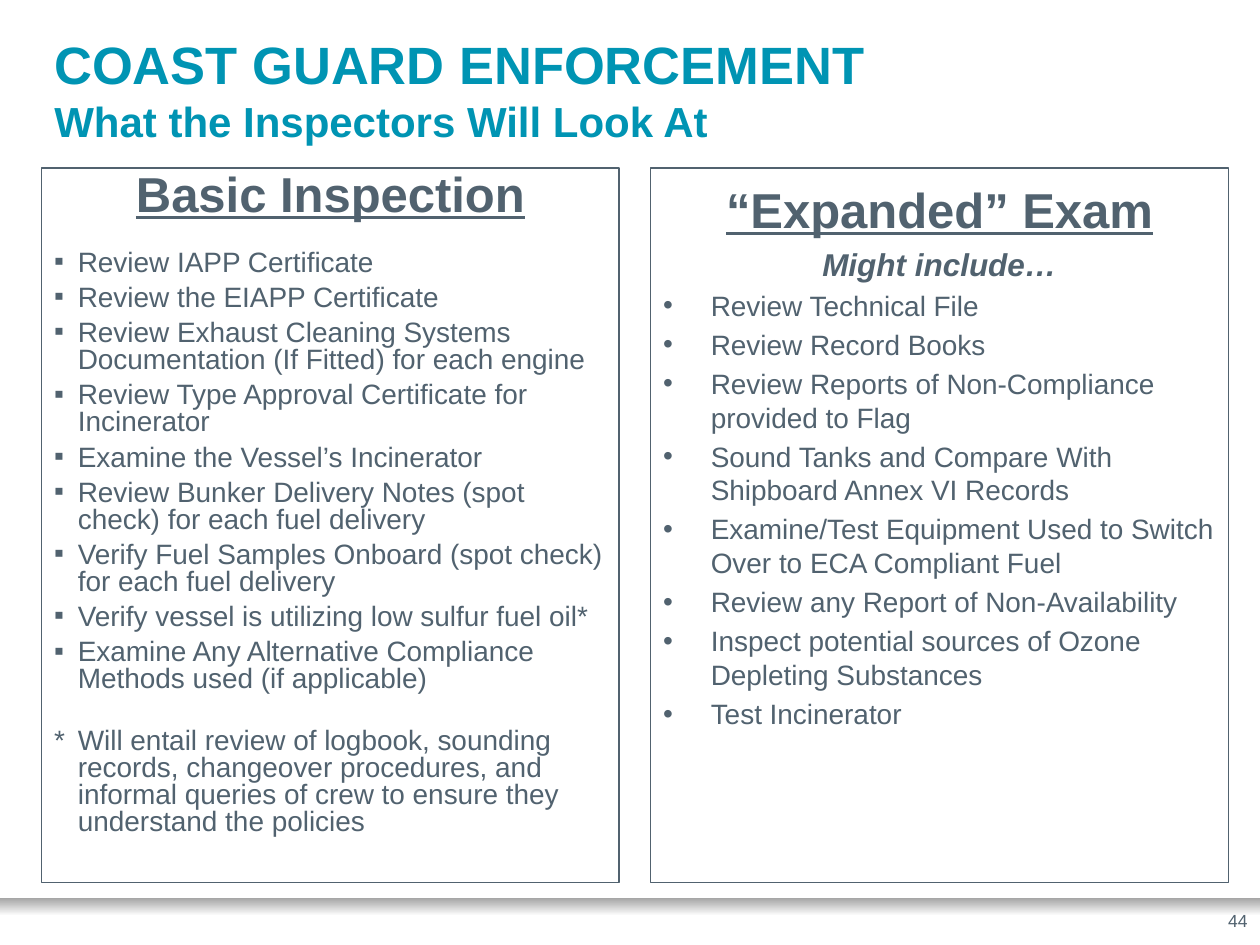
from lxml.etree import SubElement
from pptx import Presentation
from pptx.dml.color import RGBColor
from pptx.enum.shapes import MSO_SHAPE
from pptx.enum.text import MSO_ANCHOR, MSO_AUTO_SIZE, PP_ALIGN
from pptx.oxml.ns import qn
from pptx.util import Cm, Pt

COLORS = {"title": "0094B3", "text": "51626F", "band": "A6A6A6", "paper": "FFFFFF"}
FONT = "Arial"
BODY_SIZE = 16
PANEL_TOP, PANEL_WIDTH, PANEL_HEIGHT = 3.39, 11.64, 14.4

BASIC_ITEMS = [
    "Review IAPP Certificate",
    "Review the EIAPP Certificate",
    "Review Exhaust Cleaning Systems Documentation (If Fitted) for each engine",
    "Review Type Approval Certificate for Incinerator",
    "Examine the Vessel’s Incinerator",
    "Review Bunker Delivery Notes (spot check) for each fuel delivery",
    "Verify Fuel Samples Onboard (spot check) for each fuel delivery",
    "Verify vessel is utilizing low sulfur fuel oil*",
    "Examine Any Alternative Compliance Methods used (if applicable)",
]
FOOTNOTE = (
    "*\tWill entail review of logbook, sounding records, changeover procedures, "
    "and informal queries of crew to ensure they understand the policies"
)
EXPANDED_ITEMS = [
    "Review Technical File",
    "Review Record Books",
    "Review Reports of Non-Compliance provided to Flag",
    "Sound Tanks and Compare With Shipboard Annex VI Records",
    "Examine/Test Equipment Used to Switch Over to ECA Compliant Fuel",
    "Review any Report of Non-Availability",
    "Inspect potential sources of Ozone Depleting Substances",
    "Test Incinerator",
]


def rgb(name):
    return RGBColor.from_string(COLORS[name])


class SlideBuilder:
    def __init__(self, slide):
        self.slide = slide

    def style(self, font, size, color="text", bold=False, italic=False, underline=False):
        font.name, font.size = FONT, Pt(size)
        font.bold, font.italic, font.underline = bold, italic, underline
        font.color.rgb = rgb(color)

    def band(self, left, top, width, height):
        shape = self.slide.shapes.add_shape(
            MSO_SHAPE.RECTANGLE, Cm(left), Cm(top), Cm(width), Cm(height))
        shape.shadow.inherit = False
        shape.line.fill.background()
        shape.fill.gradient()
        shape.fill.gradient_angle = 270
        for stop, color, position in zip(
                shape.fill.gradient_stops, ("band", "paper"), (0, 0.42)):
            stop.color.rgb = rgb(color)
            stop.position = position

    def title(self, lines, sizes, left, top, width, height):
        shape = self.slide.shapes.title
        shape.left, shape.top = Cm(left), Cm(top)
        shape.width, shape.height = Cm(width), Cm(height)
        frame = shape.text_frame
        frame.text = "\v".join(lines)
        frame.auto_size = MSO_AUTO_SIZE.NONE
        frame.vertical_anchor = MSO_ANCHOR.MIDDLE
        paragraph = frame.paragraphs[0]
        paragraph.alignment = PP_ALIGN.LEFT
        for run, size in zip(paragraph.runs, sizes):
            self.style(run.font, size, "title", bold=True)

    def label(self, text, size, left, top, width, height):
        shape = self.slide.shapes.add_textbox(Cm(left), Cm(top), Cm(width), Cm(height))
        frame = shape.text_frame
        frame.word_wrap = True
        frame.vertical_anchor = MSO_ANCHOR.MIDDLE
        frame.text = text
        frame.paragraphs[0].alignment = PP_ALIGN.RIGHT
        self.style(frame.paragraphs[0].runs[0].font, size)

    def panel(self, left, inset_top):
        shape = self.slide.shapes.add_shape(
            MSO_SHAPE.RECTANGLE, Cm(left), Cm(PANEL_TOP), Cm(PANEL_WIDTH), Cm(PANEL_HEIGHT))
        shape.shadow.inherit = False
        shape.fill.background()
        shape.line.color.rgb = rgb("text")
        shape.line.width = Pt(0.75)
        frame = shape.text_frame
        frame.word_wrap = True
        frame.vertical_anchor = MSO_ANCHOR.TOP
        frame.margin_top = Cm(inset_top)
        return frame

    def paragraph(self, frame, text, size=BODY_SIZE, before=3.2, after=0, spacing=1.0,
                  hanging=0, bullet=None, align=PP_ALIGN.LEFT, **look):
        first = frame.paragraphs[0]
        paragraph = frame.add_paragraph() if first.runs else first
        paragraph.text = text
        paragraph.alignment = align
        paragraph.line_spacing = spacing
        paragraph.space_before, paragraph.space_after = Pt(before), Pt(after)
        properties = paragraph._p.get_or_add_pPr()
        properties.set("marL", str(Cm(hanging)))
        properties.set("indent", str(-Cm(hanging)))
        if bullet:
            SubElement(properties, qn("a:buFont"), typeface=FONT)
            SubElement(properties, qn("a:buChar"), char=bullet)
        for run in paragraph.runs:
            self.style(run.font, size, **look)


def main():
    presentation = Presentation()
    presentation.slide_width, presentation.slide_height = Cm(25.4), Cm(19.05)
    slide = presentation.slides.add_slide(presentation.slide_layouts[5])
    builder = SlideBuilder(slide)
    heading = dict(size=28, before=0, align=PP_ALIGN.CENTER, bold=True, underline=True)

    # Footer band and page number
    builder.band(0, 18.11, 25.4, 0.84)
    builder.label("44", 10, 19.48, 18.29, 5.92, 0.53)

    # Title
    builder.title(["COAST GUARD ENFORCEMENT", "What the Inspectors Will Look At"],
                  (30, 24), 0.84, 0.2, 19.05, 3.18)

    # Basic inspection
    basic = builder.panel(0.84, 0.13)
    tight = dict(spacing=0.8, hanging=0.48)
    builder.paragraph(basic, "Basic Inspection", spacing=0.8, after=13.4, **heading)
    for item in BASIC_ITEMS:
        builder.paragraph(basic, item, after=1.6, bullet="▪", **tight)
    builder.paragraph(basic, FOOTNOTE, before=18.4, **tight)

    # Expanded exam
    expanded = builder.panel(13.12, 0.23)
    builder.paragraph(expanded, "“Expanded” Exam", **heading)
    builder.paragraph(expanded, "Might include…", size=18, before=3.6,
                      align=PP_ALIGN.CENTER, bold=True, italic=True)
    for item in EXPANDED_ITEMS:
        builder.paragraph(expanded, item, hanging=0.96, bullet="•")

    presentation.save("out.pptx")


if __name__ == "__main__":
    main()
